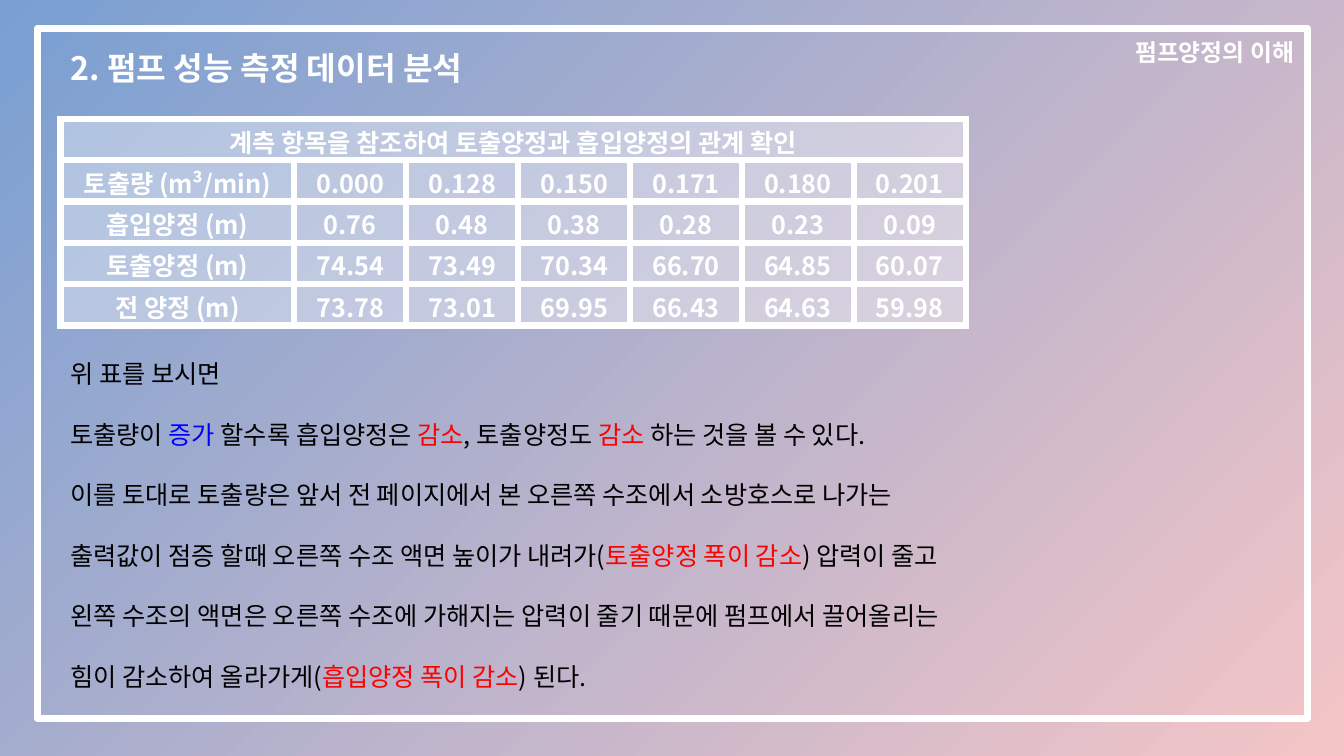
from lxml.etree import SubElement
from pptx import Presentation
from pptx.dml.color import RGBColor
from pptx.enum.shapes import MSO_SHAPE
from pptx.enum.text import PP_ALIGN
from pptx.oxml.ns import qn
from pptx.util import Pt

PX = 9144
FONT = "Noto Sans CJK KR"
COLORS = {
    "white": "FFFFFF",
    "black": "000000",
    "blue": "0000FF",
    "red": "FF0000",
    "sky": "799FD2",
    "pink": "F4C5C6",
}
MEASUREMENTS = [
    ["토출량 (m³/min)", "0.000", "0.128", "0.150", "0.171", "0.180", "0.201"],
    ["흡입양정 (m)", "0.76", "0.48", "0.38", "0.28", "0.23", "0.09"],
    ["토출양정 (m)", "74.54", "73.49", "70.34", "66.70", "64.85", "60.07"],
    ["전 양정 (m)", "73.78", "73.01", "69.95", "66.43", "64.63", "59.98"],
]
ANALYSIS = [
    [("위 표를 보시면", "black")],
    [("토출량이 ", "black"), ("증가", "blue"), (" 할수록 흡입양정은 ", "black"),
     ("감소", "red"), (", 토출양정도 ", "black"), ("감소", "red"),
     (" 하는 것을 볼 수 있다.", "black")],
    [("이를 토대로 토출량은 앞서 전 페이지에서 본 오른쪽 수조에서 소방호스로 나가는", "black")],
    [("출력값이 점증 할때 오른쪽 수조 액면 높이가 내려가(", "black"),
     ("토출양정 폭이 감소", "red"), (") 압력이 줄고", "black")],
    [("왼쪽 수조의 액면은 오른쪽 수조에 가해지는 압력이 줄기 때문에 펌프에서 끌어올리는", "black")],
    [("힘이 감소하여 올라가게(", "black"), ("흡입양정 폭이 감소", "red"),
     (") 된다.", "black")],
]


def rgb(name):
    return RGBColor.from_string(COLORS[name])


class SlideBuilder:
    """Draws styled elements on one slide, with lengths in px."""

    def __init__(self, slide):
        self.s = slide

    def background(self, start, end):
        fill = self.s.background.fill
        fill.gradient()
        fill.gradient_angle = 315
        for stop, name in zip(fill.gradient_stops, (start, end)):
            stop.color.rgb = rgb(name)

    def frame(self, *box):
        sp = self.s.shapes.add_shape(MSO_SHAPE.RECTANGLE, *(v * PX for v in box))
        sp.shadow.inherit = False
        sp.fill.background()
        sp.line.color.rgb = rgb("white")
        sp.line.width = Pt(5)

    def paragraph(self, p, parts, size, bold=False):
        p.line_spacing = Pt(size * 1.2)
        for text, color in parts:
            r = p.add_run()
            r.text = text
            r.font.name = FONT
            r.font.size = Pt(size)
            r.font.bold = bold
            r.font.color.rgb = rgb(color)
            SubElement(r.font._element, qn("a:ea"), typeface=FONT)

    def text(self, box, lines, size, bold=False, gap=0):
        tf = self.s.shapes.add_textbox(*(v * PX for v in box)).text_frame
        tf.word_wrap = True
        for i, parts in enumerate(lines):
            p = tf.add_paragraph() if i else tf.paragraphs[0]
            p.space_before = Pt(gap if i else 0)
            self.paragraph(p, parts, size, bold)

    def cell(self, cell, text):
        cell.margin_top, cell.margin_bottom = 10 * PX, 0
        tcPr = cell._tc.get_or_add_tcPr()
        for side in ("a:lnL", "a:lnR", "a:lnT", "a:lnB"):
            ln = SubElement(tcPr, qn(side), w=str(Pt(5)))
            fill = SubElement(ln, qn("a:solidFill"))
            SubElement(fill, qn("a:srgbClr"), val=COLORS["white"])
        cell.fill.solid()
        cell.fill.fore_color.rgb = rgb("white")
        color = tcPr.find(qn("a:solidFill")).find(qn("a:srgbClr"))
        SubElement(color, qn("a:alpha"), val="37000")
        p = cell.text_frame.paragraphs[0]
        p.alignment = PP_ALIGN.CENTER
        self.paragraph(p, [(text, "white")] if text else [], 18, True)

    def table(self, left, top, widths, row_height, title, rows):
        grid = [[title] + [""] * (len(widths) - 1)] + rows
        box = (left, top, sum(widths), row_height * len(grid))
        table = self.s.shapes.add_table(
            len(grid), len(widths), *(v * PX for v in box)).table
        table.first_row = table.horz_banding = False
        for column, width in zip(table.columns, widths):
            column.width = width * PX
        for i, values in enumerate(grid):
            table.rows[i].height = row_height * PX
            for j, value in enumerate(values):
                self.cell(table.cell(i, j), value)
        table.cell(0, 0).merge(table.cell(0, len(widths) - 1))


def main():
    prs = Presentation()
    prs.slide_width, prs.slide_height = 1333 * PX, 750 * PX
    b = SlideBuilder(prs.slides.add_slide(prs.slide_layouts[6]))
    b.background("sky", "pink")
    b.frame(37, 28, 1260, 685)
    b.text((1116, 33, 189, 38), [[("펌프양정의 이해", "white")]], 17, True)
    b.table(60, 118, [232] + [111] * 6, 41,
            "계측 항목을 참조하여 토출양정과 흡입양정의 관계 확인", MEASUREMENTS)
    b.text((60, 351, 1000, 340), ANALYSIS, 18, gap=21.6)
    b.text((60, 43, 441, 48), [[("2. 펌프 성능 측정 데이터 분석", "white")]], 23, True)
    prs.save("out.pptx")


if __name__ == "__main__":
    main()
